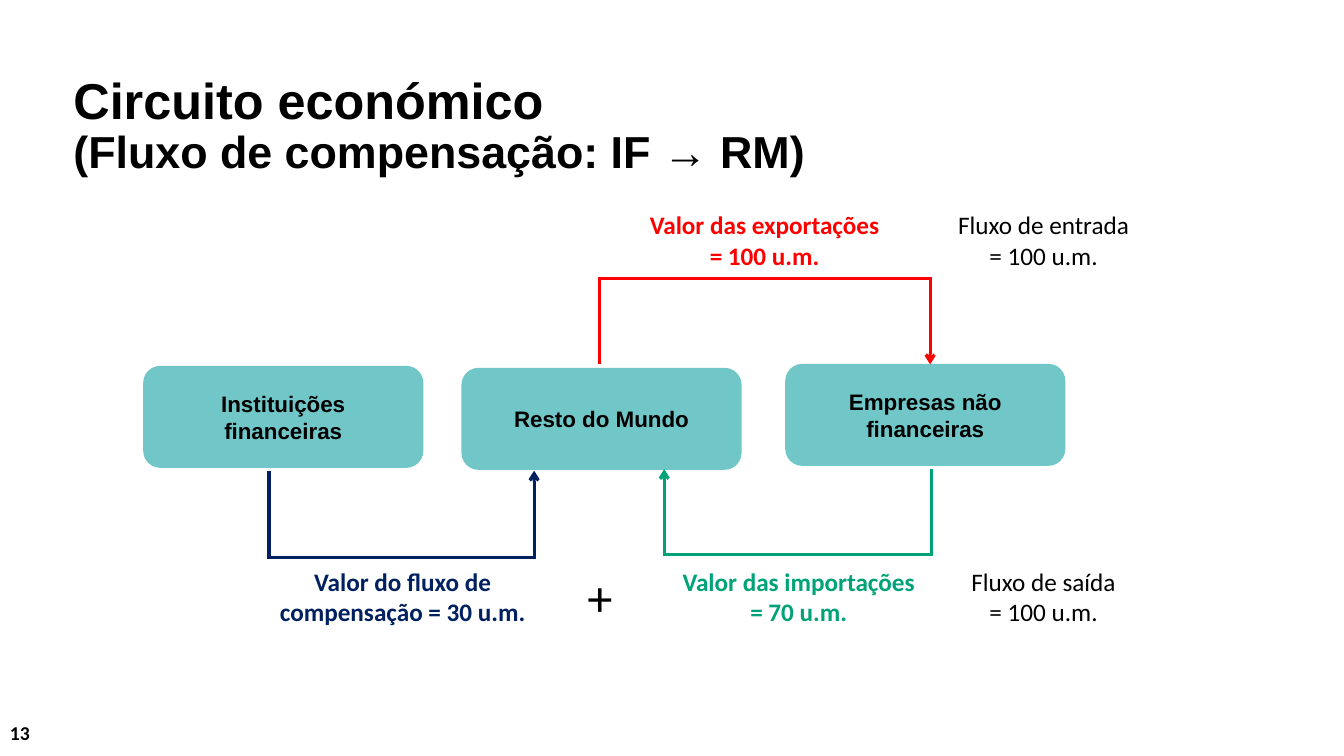
"""Build the economic circuit slide with its compensation flows."""
from dataclasses import dataclass

from lxml import etree
from pptx import Presentation
from pptx.dml.color import RGBColor
from pptx.enum.shapes import MSO_CONNECTOR, MSO_SHAPE
from pptx.enum.text import MSO_ANCHOR, MSO_AUTO_SIZE, PP_ALIGN
from pptx.oxml.ns import qn
from pptx.util import Cm, Pt

STRAIGHT = MSO_CONNECTOR.STRAIGHT
ROUNDED, RECTANGLE = MSO_SHAPE.ROUNDED_RECTANGLE, MSO_SHAPE.RECTANGLE
TOP, MIDDLE = MSO_ANCHOR.TOP, MSO_ANCHOR.MIDDLE
LEFT, CENTER = PP_ALIGN.LEFT, PP_ALIGN.CENTER
GROW = MSO_AUTO_SIZE.SHAPE_TO_FIT_TEXT

COLORS = {
    "black": "000000", "white": "FFFFFF", "teal": "71C6C8",
    "red": "FF0000", "green": "00A378", "navy": "002060",
}
SECTOR_WIDTH, SECTOR_HEIGHT = 7.06, 2.57
LABEL_WIDTH, LABEL_HEIGHT = 7.14, 1.8
UPPER_LABELS, LOWER_LABELS = 5.16, 14.15
LINE_WIDTH = 2.25
CORNER = 0.04


@dataclass
class Sector:
    left: float
    top: float
    lines: list[str]


@dataclass
class Flow:
    left: float
    right: float
    bar: float
    end: float
    color: str
    arrow_on_right: bool


@dataclass
class Label:
    left: float
    top: float
    lines: list[str]
    color: str = "black"
    bold: bool = False
    size: int = 18
    width: float = LABEL_WIDTH
    filled: bool = True


SECTORS = [
    Sector(3.61, 9.22, ["Instituições", "financeiras"]),
    Sector(19.79, 9.17, ["Empresas não", "financeiras"]),
    Sector(11.63, 9.27, ["Resto do Mundo"]),
]
FLOWS = [
    Flow(15.11, 23.44, 7.01, 9.18, "red", True),
    Flow(16.74, 23.47, 13.97, 11.82, "green", False),
    Flow(6.78, 13.46, 14.05, 11.86, "navy", True),
]
LABELS = [
    Label(15.7, UPPER_LABELS, ["Valor das exportações", "= 100 u.m."], "red", True),
    Label(16.56, LOWER_LABELS, ["Valor das importações", "= 70 u.m."], "green", True),
    Label(6.58, LOWER_LABELS, ["Valor do fluxo de compensação = 30 u.m."], "navy", True),
    Label(13.99, LOWER_LABELS, ["+"], size=36, width=2.26),
    Label(22.73, UPPER_LABELS, ["Fluxo de entrada", "= 100 u.m."]),
    Label(22.73, LOWER_LABELS, ["Fluxo de saída", "= 100 u.m."], filled=False),
]


def rgb(name: str) -> RGBColor:
    return RGBColor.from_string(COLORS[name])


def add_span(para, text: str, size: float, font: str, color: str, bold: bool) -> None:
    span = para.add_run()
    span.text = text
    span.font.size = Pt(size)
    span.font.name = font
    span.font.bold = bold
    span.font.color.rgb = rgb(color)


def write_lines(box, lines: list[str], size: float, font: str, color: str = "black",
                bold: bool = True, align=CENTER, anchor=TOP) -> None:
    frame = box.text_frame
    frame.word_wrap = True
    frame.vertical_anchor = anchor
    for index, line in enumerate(lines):
        para = frame.add_paragraph() if index else frame.paragraphs[0]
        para.alignment = align
        add_span(para, line, size, font, color, bold)


def add_filled(page, kind, bounds: list, color: str):
    box = page.shapes.add_shape(kind, *bounds)
    box.shadow.inherit = False
    box.fill.solid()
    box.fill.fore_color.rgb = rgb(color)
    box.line.fill.background()
    return box


def add_title(page) -> None:
    box = page.shapes.add_textbox(Cm(1.6), Cm(1.78), Cm(31.09), Cm(3.35))
    box.text_frame.word_wrap = True
    para = box.text_frame.paragraphs[0]
    para.line_spacing = 0.9
    add_span(para, "Circuito económico", 36, "Arial", "black", True)
    para.add_line_break()
    add_span(para, "(Fluxo de compensação: IF → RM)", 32, "Arial", "black", True)


def add_sector(page, sector: Sector) -> None:
    bounds = [Cm(v) for v in (sector.left, sector.top, SECTOR_WIDTH, SECTOR_HEIGHT)]
    box = add_filled(page, ROUNDED, bounds, "teal")
    write_lines(box, sector.lines, 16, "Arial", anchor=MIDDLE)


def add_line(page, start: tuple[float, float], end: tuple[float, float],
             color: str, arrow: bool = False) -> None:
    line = page.shapes.add_connector(STRAIGHT, *[Cm(v) for v in start + end])
    line.line.color.rgb = rgb(color)
    line.line.width = Pt(LINE_WIDTH)
    if arrow:
        etree.SubElement(line.line._get_or_add_ln(), qn("a:tailEnd"), type="arrow")
    etree.SubElement(line._element.spPr, qn("a:effectLst"))


def add_flow(page, flow: Flow) -> None:
    add_line(page, (flow.left - CORNER, flow.bar), (flow.right + CORNER, flow.bar), flow.color)
    for x, arrow in ((flow.left, not flow.arrow_on_right), (flow.right, flow.arrow_on_right)):
        add_line(page, (x, flow.bar), (x, flow.end), flow.color, arrow)


def add_label(page, label: Label) -> None:
    bounds = [Cm(v) for v in (label.left, label.top, label.width, LABEL_HEIGHT)]
    if label.filled:
        box = add_filled(page, RECTANGLE, bounds, "white")
    else:
        box = page.shapes.add_textbox(*bounds)
    write_lines(box, label.lines, label.size, "Calibri", label.color, label.bold)
    box.text_frame.auto_size = GROW


def main() -> None:
    deck = Presentation()
    deck.slide_width, deck.slide_height = Cm(33.87), Cm(19.05)
    page = deck.slides.add_slide(deck.slide_layouts[6])
    number = page.shapes.add_textbox(Cm(0), Cm(18.03), Cm(7.62), Cm(1.02))
    write_lines(number, ["13"], 14, "Calibri", align=LEFT)
    add_title(page)
    for sector in SECTORS:
        add_sector(page, sector)
    for flow in FLOWS:
        add_flow(page, flow)
    for label in LABELS:
        add_label(page, label)
    deck.save("out.pptx")


if __name__ == "__main__":
    main()
